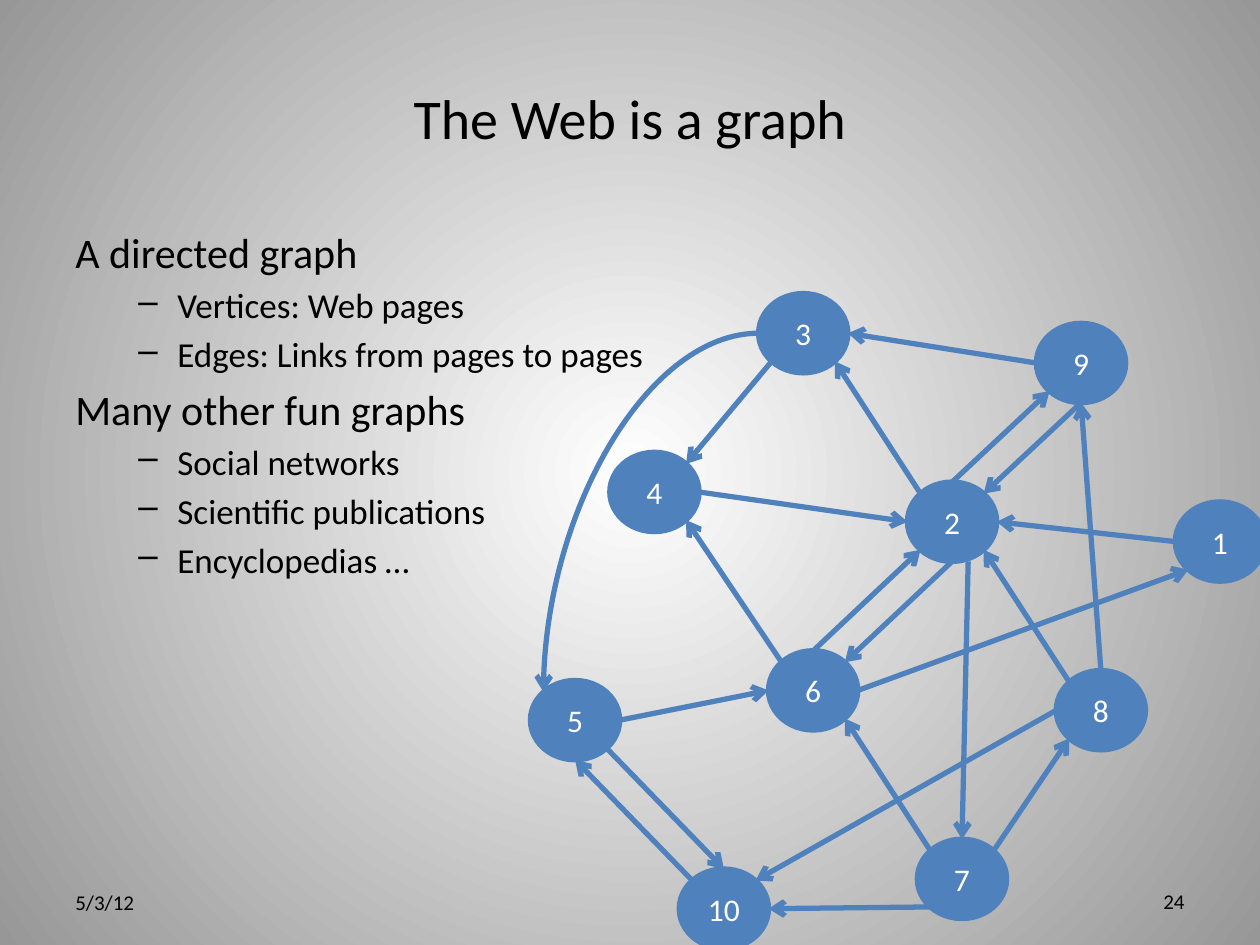
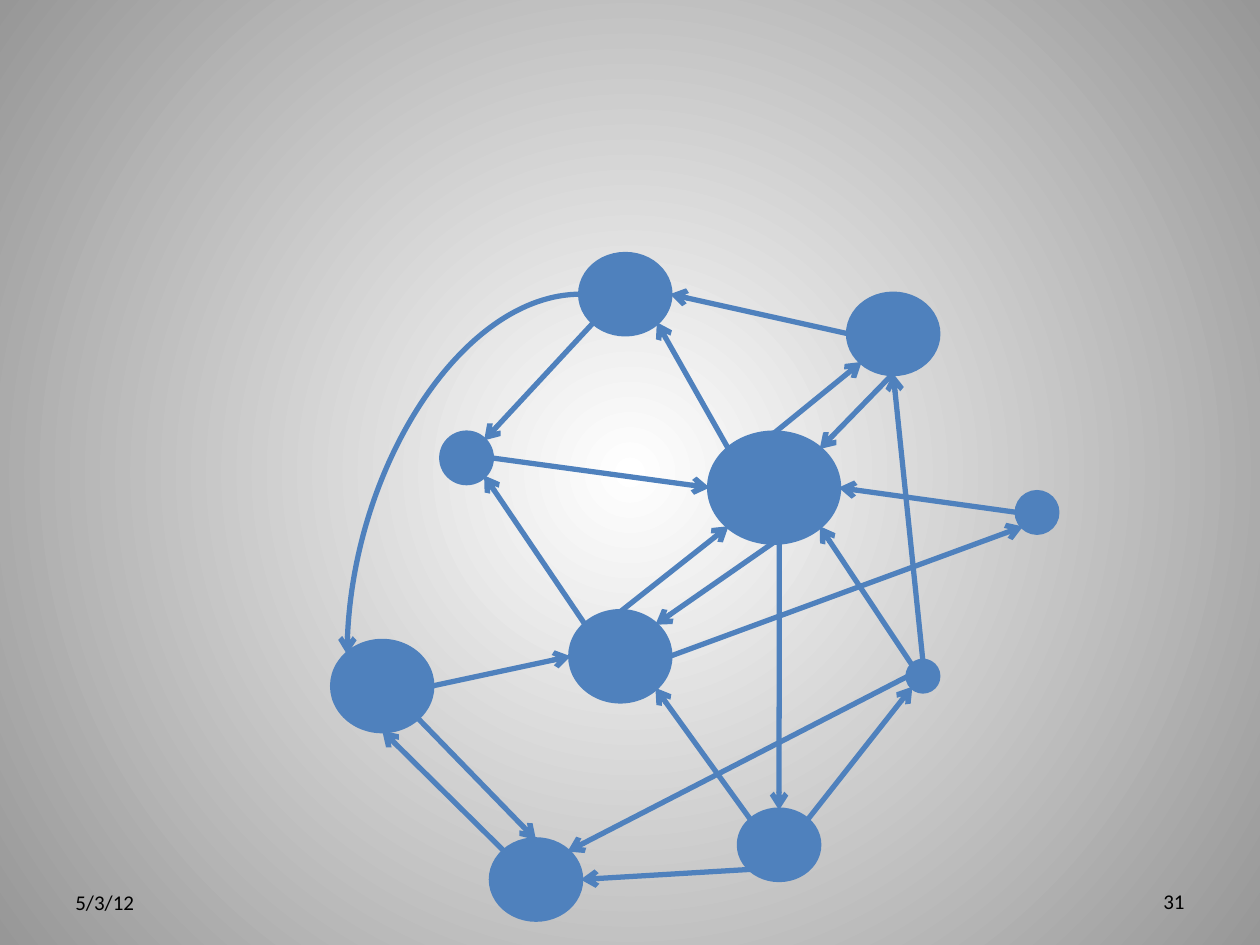
import math

from lxml import etree
from pptx import Presentation
from pptx import util as u
from pptx.dml.color import RGBColor
from pptx.enum import shapes, text
from pptx.oxml.ns import qn

COLORS = {"glow": "FFFFFF", "rim": "979797", "ink": "000000",
          "graph": "4F81BD", "label": "FFFFFF"}
FONT = "Calibri"
WIDTH, HEIGHT = u.Inches(10), u.Inches(7.5)
CELL = u.Mm(2)
STROKE = u.Pt(3)
DATE = "5/3/12"

OUTLINE = [
    ("A directed graph",
     ["Vertices: Web pages", "Edges: Links from pages to pages"]),
    ("Many other fun graphs",
     ["Social networks", "Scientific publications", "Encyclopedias …"]),
]

# Page number: (column, row, columns wide, rows high)
EQUAL_PAGES = {
    page: (column, row, 9, 8) for page, column, row in [
        (2, 38, 19), (9, 51, 3), (6, 24, 36), (8, 53, 38), (1, 65, 21),
        (7, 39, 55), (3, 23, 0), (4, 8, 16), (5, 0, 39), (10, 15, 58)]
}
RANKED_PAGES = {
    2: (38, 18, 13, 11), 9: (52, 4, 9, 8), 6: (24, 36, 10, 9),
    8: (58, 41, 3, 3), 1: (69, 24, 4, 4), 7: (41, 56, 8, 7),
    3: (25, 0, 9, 8), 4: (11, 18, 5, 5), 5: (0, 39, 10, 9),
    10: (16, 59, 9, 8),
}

# Linking page, side it leaves from, linked page, side it arrives at
LINKS = [
    (1, "W", 2, "E"), (6, "E", 1, "SW"), (9, "W", 3, "E"),
    (3, "SW", 4, "NE"), (4, "E", 2, "W"), (2, "NW", 3, "SE"),
    (2, "N", 9, "SW"), (9, "S", 2, "NE"), (8, "N", 9, "S"),
    (8, "NW", 2, "SE"), (8, "W", 10, "NE"), (7, "NE", 8, "SW"),
    (7, "SW", 10, "E"), (10, "NW", 5, "S"), (5, "E", 6, "W"),
    (6, "NW", 4, "SE"), (6, "N", 2, "SW"), (5, "SE", 10, "N"),
    (2, "S", 6, "NE"), (7, "NW", 6, "SE"),
]
COMPASS = ["E", "SE", "S", "SW", "W", "NW", "N", "NE"]


def rgb(name):
    return RGBColor.from_string(COLORS[name])


def style(paragraph, size, color="ink", align=text.PP_ALIGN.LEFT):
    paragraph.alignment = align
    for run in paragraph.runs:
        run.font.name = FONT
        run.font.size = u.Pt(size)
        run.font.color.rgb = rgb(color)


def set_background(master):
    """Give every slide a gradient that spreads from its centre."""
    fill = master.background.fill
    fill.gradient()
    for stop, name in zip(fill.gradient_stops, ("glow", "rim")):
        stop.color.rgb = rgb(name)
    gradient = master.element.find(".//" + qn("p:bgPr")).find(qn("a:gradFill"))
    gradient.remove(gradient.find(qn("a:lin")))
    circle = etree.SubElement(gradient, qn("a:path"), {"path": "circle"})
    etree.SubElement(circle, qn("a:fillToRect"),
                     {side: "50000" for side in "ltrb"})


def add_text_frame(slide, left, top, width, height,
                   anchor=text.MSO_ANCHOR.MIDDLE):
    """Place a text box by shares of the slide's size."""
    box = slide.shapes.add_textbox(
        int(WIDTH * left), int(HEIGHT * top),
        int(WIDTH * width), int(HEIGHT * height))
    frame = box.text_frame
    frame.word_wrap = True
    frame.vertical_anchor = anchor
    return frame


def add_line_of_text(slide, words, area, size, align=text.PP_ALIGN.LEFT):
    frame = add_text_frame(slide, *area)
    frame.text = words
    style(frame.paragraphs[0], size, align=align)


def add_footer(slide, number):
    add_line_of_text(slide, DATE, (0.05, 0.93, 0.22, 0.05), 12)
    add_line_of_text(slide, str(number), (0.717, 0.927, 0.233, 0.053), 12,
                     text.PP_ALIGN.RIGHT)


def add_outline(slide, outline):
    frame = add_text_frame(slide, 0.05, 0.233, 0.9, 0.66, text.MSO_ANCHOR.TOP)
    lines = []
    for heading, details in outline:
        lines += [(heading, 24, 0.38, 0.38, None)]
        lines += [(detail, 20, 0.81, 0.31, "–") for detail in details]
    for index, (words, size, margin, hang, bullet) in enumerate(lines):
        paragraph = frame.add_paragraph() if index else frame.paragraphs[0]
        paragraph.text = words
        style(paragraph, size)
        paragraph.space_before = u.Pt(size * 0.2)
        properties = paragraph.font._element.getparent()
        properties.set("marL", str(u.Inches(margin)))
        properties.set("indent", str(-u.Inches(hang)))
        if bullet:
            paragraph.level = 1
            mark = etree.Element(qn("a:buChar"), {"char": bullet})
            properties.find(qn("a:defRPr")).addprevious(mark)


def add_page(slide, area, label):
    node = slide.shapes.add_shape(shapes.MSO_SHAPE.OVAL, *area)
    node.shadow.inherit = False
    node.fill.solid()
    node.fill.fore_color.rgb = rgb("graph")
    node.line.color.rgb = rgb("graph")
    node.line.width = STROKE
    if label:
        frame = node.text_frame
        frame.text = label
        frame.word_wrap = False
        frame.vertical_anchor = text.MSO_ANCHOR.MIDDLE
        style(frame.paragraphs[0], 18, "label", text.PP_ALIGN.CENTER)


def point_in(area, across, down):
    left, top, width, height = area
    return int(left + width * across), int(top + height * down)


def rim_point(area, side):
    """Point where an ellipse faces the given compass direction."""
    angle = COMPASS.index(side) * math.pi / 4
    return point_in(area, 0.5 + math.cos(angle) / 2, 0.5 + math.sin(angle) / 2)


def add_link(slide, start, end, curved=False):
    kind = shapes.MSO_CONNECTOR.CURVE if curved else shapes.MSO_CONNECTOR.STRAIGHT
    link = slide.shapes.add_connector(kind, *start, *end)
    link.line.color.rgb = rgb("graph")
    link.line.width = STROKE
    properties = link.element.find(qn("p:spPr"))
    if curved:
        properties.find(qn("a:prstGeom")).set("prst", "curvedConnector2")
    etree.SubElement(properties.find(qn("a:ln")), qn("a:tailEnd"),
                     {"type": "arrow"})
    etree.SubElement(properties, qn("a:effectLst"))


def add_web_graph(slide, pages, origin, link_2_to_7, labelled):
    """Draw pages on the cell grid; link_2_to_7 is a start within page 2."""
    left, top = (u.Inches(length) for length in origin)
    areas = {
        page: (left + column * CELL, top + row * CELL, wide * CELL, high * CELL)
        for page, (column, row, wide, high) in pages.items()}
    for page, area in areas.items():
        add_page(slide, area, str(page) if labelled else "")
    for source, leaving, target, arriving in LINKS:
        add_link(slide, rim_point(areas[source], leaving),
                 rim_point(areas[target], arriving))
    add_link(slide, point_in(areas[2], *link_2_to_7), rim_point(areas[7], "N"))
    add_link(slide, rim_point(areas[3], "W"), rim_point(areas[5], "NW"),
             curved=True)


def main():
    deck = Presentation()
    deck.slide_width, deck.slide_height = WIDTH, HEIGHT
    set_background(deck.slide_master)
    blank = deck.slide_layouts[6]

    web = deck.slides.add_slide(blank)
    add_line_of_text(web, "The Web is a graph", (0.05, 0.04, 0.9, 0.167), 32,
                     text.PP_ALIGN.CENTER)
    add_outline(web, OUTLINE)
    add_footer(web, 24)
    add_web_graph(web, EQUAL_PAGES, (4.21, 2.33), (0.68, 1), labelled=True)

    ranked = deck.slides.add_slide(blank)
    add_footer(ranked, 31)
    add_web_graph(ranked, RANKED_PAGES, (2.64, 2.02), (0.54, 0.8),
                  labelled=False)

    deck.save("out.pptx")


if __name__ == "__main__":
    main()
